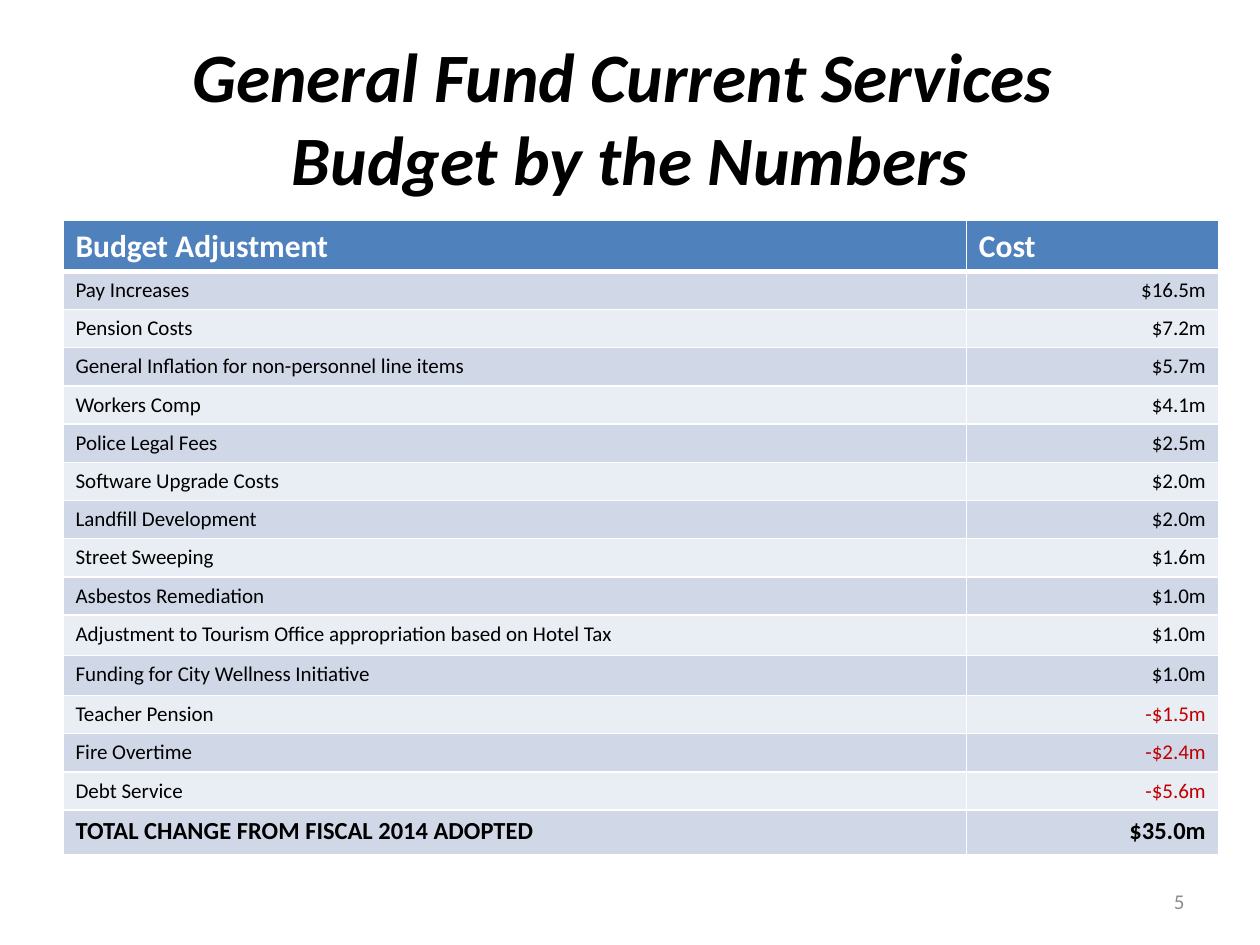
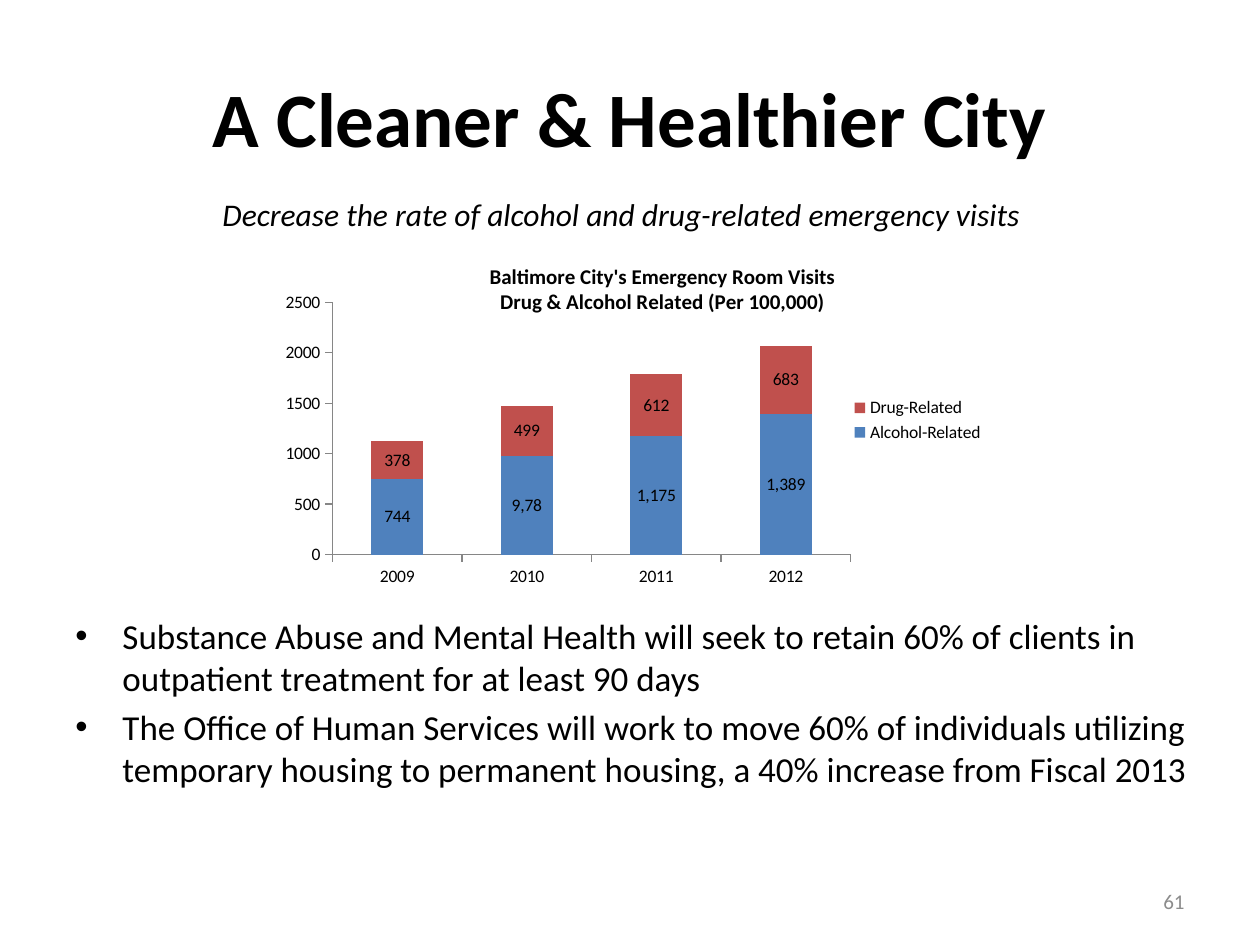
import pptx
import pptx.chart.data
import pptx.dml.color
import pptx.enum.chart
import pptx.enum.text
import pptx.oxml
import pptx.oxml.ns
import pptx.util

Cm, Pt = pptx.util.Cm, pptx.util.Pt
RGB = pptx.dml.color.RGBColor.from_string
ALIGN = pptx.enum.text.PP_ALIGN
MIDDLE = pptx.enum.text.MSO_ANCHOR.MIDDLE
NS = pptx.oxml.ns.nsdecls


class Theme:
    font = "Calibri"
    ink, white, gray, axis = "000000", "FFFFFF", "8C8C8C", "868686"
    blue, red, loss = "4F81BD", "C0504D", "C00000"
    bands = ("E9EDF4", "D0D8E8")
    head, body, lead, total, small, tick = 44, 20, 18, 14, 12, 10


def style(font, size, color=Theme.ink, bold=False, italic=False):
    font.name, font.size = Theme.font, Pt(size)
    font.bold, font.italic = bold, italic
    font.color.rgb = RGB(color)


def write(slide, box, lines, size, align, color=Theme.ink, italic=False):
    """Add a wrapped text box with one paragraph a line."""
    frame = slide.shapes.add_textbox(*map(Cm, box)).text_frame
    frame.word_wrap = True
    frame.text = "\n".join(lines)
    for para in frame.paragraphs:
        para.alignment = align
        style(para.runs[0].font, size, color, italic=italic)
    return frame


deck = pptx.Presentation()
deck.slide_width, deck.slide_height = Cm(25.4), Cm(19.05)

# Titles and page numbers
heads = [
    ("General Fund Current Services \vBudget by the Numbers", 39.6, True, "5"),
    ("A Cleaner & Healthier City", Theme.head, False, "61"),
]
for text, size, italic, page in heads:
    slide = deck.slides.add_slide(deck.slide_layouts[5])
    title = slide.shapes.title
    title.left, title.top, title.width, title.height = map(Cm, (1.27, 0.76, 22.86, 3.18))
    title.text_frame.text = text
    title.text_frame.vertical_anchor = MIDDLE
    para = title.text_frame.paragraphs[0]
    para.alignment = ALIGN.CENTER
    for run in para.runs:
        style(run.font, size, bold=True, italic=italic)
    foot = write(slide, (18.21, 17.65, 5.92, 1.02), [page], Theme.small, ALIGN.RIGHT, Theme.gray)
    foot.vertical_anchor = MIDDLE

budget, health = deck.slides

# Budget table
rows = [
    ("Budget Adjustment", "Cost"),
    ("Pay Increases", "$16.5m"),
    ("Pension Costs", "$7.2m"),
    ("General Inflation for non-personnel line items", "$5.7m"),
    ("Workers Comp", "$4.1m"),
    ("Police Legal Fees", "$2.5m"),
    ("Software Upgrade Costs", "$2.0m"),
    ("Landfill Development", "$2.0m"),
    ("Street Sweeping", "$1.6m"),
    ("Asbestos Remediation", "$1.0m"),
    ("Adjustment to Tourism Office appropriation based on Hotel Tax", "$1.0m"),
    ("Funding for City Wellness Initiative", "$1.0m"),
    ("Teacher Pension", "-$1.5m"),
    ("Fire Overtime", "-$2.4m"),
    ("Debt Service", "-$5.6m"),
    ("TOTAL CHANGE FROM FISCAL 2014 ADOPTED", "$35.0m"),
]
last = len(rows) - 1
highs = {0: 1.02, 10: 0.81, 11: 0.81, last: 0.91}
table = budget.shapes.add_table(
    len(rows), 2, Cm(1.27), Cm(4.45), Cm(23.29), Cm(12.79)).table
table.columns[0].width, table.columns[1].width = Cm(18.21), Cm(5.08)
for r, row in enumerate(rows):
    table.rows[r].height = Cm(highs.get(r, 0.77))
    for c, text in enumerate(row):
        cell = table.cell(r, c)
        cell.text = text
        cell.fill.solid()
        cell.fill.fore_color.rgb = RGB(Theme.bands[r % 2] if r else Theme.blue)
        para = cell.text_frame.paragraphs[0]
        para.alignment = ALIGN.RIGHT if r and c else ALIGN.LEFT
        size = {0: Theme.lead, last: Theme.total}.get(r, Theme.small)
        color = Theme.loss if text.startswith("-") else Theme.ink if r else Theme.white
        style(para.runs[0].font, size, color, bold=r in (0, last))
        props = cell._tc.get_or_add_tcPr()
        for n, side in enumerate("LRTB"):
            thick = (r, side) in ((0, "B"), (1, "T"))
            props.insert(n, pptx.oxml.parse_xml(
                f'<a:ln{side} {NS("a")} w="{Pt(3 if thick else 1)}"><a:solidFill>'
                f'<a:srgbClr val="{Theme.white}"/></a:solidFill></a:ln{side}>'))

# Health goal and actions
write(health, (0, 3.81, 25.2, 1.02),
      ["Decrease the rate of alcohol and drug-related emergency visits "],
      Theme.lead, ALIGN.CENTER, italic=True)
goals = write(health, (1.27, 12.27, 22.91, 5.38), [
    "Substance Abuse and Mental Health will seek to retain 60% of clients in "
    "outpatient treatment for at least 90 days",
    "The Office of Human Services will work to move 60% of individuals utilizing "
    "temporary housing to permanent housing, a 40% increase from Fiscal 2013",
], Theme.body, ALIGN.LEFT)
for n, para in enumerate(goals.paragraphs):
    props = para._p.get_or_add_pPr()
    props.set("marL", str(Cm(0.95)))
    props.set("indent", str(-Cm(0.95)))
    for mark in ('buFont {} typeface="Arial"', 'buChar {} char="•"'):
        props.append(pptx.oxml.parse_xml(f"<a:{mark.format(NS('a'))}/>"))
    para.space_before = Pt(4 if n else 0)

# Emergency visits chart
data = pptx.chart.data.CategoryChartData(number_format="General")
data.categories = ["2009", "2010", "2011", "2012"]
data.add_series("Alcohol-Related", (744, 978, 1175, 1389))
data.add_series("Drug-Related", (378, 499, 612, 683))
kinds = pptx.enum.chart
chart = health.shapes.add_chart(
    kinds.XL_CHART_TYPE.COLUMN_STACKED, Cm(5.38), Cm(5.08), Cm(14.71), Cm(6.78), data).chart
style(chart.font, Theme.lead)
chart.has_title = True
frame = chart.chart_title.text_frame
frame.text = "Baltimore City's Emergency Room Visits\nDrug & Alcohol Related (Per 100,000)"
for para in frame.paragraphs:
    style(para.runs[0].font, Theme.small, bold=True)
chart.has_legend = True
chart.legend.position = kinds.XL_LEGEND_POSITION.RIGHT
chart.legend.include_in_layout = False
style(chart.legend.font, Theme.tick)

for axis in (chart.category_axis, chart.value_axis):
    axis.has_major_gridlines = False
    axis.major_tick_mark = kinds.XL_TICK_MARK.OUTSIDE
    axis.format.line.color.rgb = RGB(Theme.axis)
    style(axis.tick_labels.font, Theme.tick)
chart.value_axis.minimum_scale, chart.value_axis.maximum_scale = 0, 2500
chart.value_axis.major_unit = 500

plot = chart.plots[0]
plot.gap_width, plot.overlap = 150, 100
plot.vary_by_categories = False
for series, color in zip(plot.series, (Theme.blue, Theme.red)):
    series.format.fill.solid()
    series.format.fill.fore_color.rgb = RGB(color)
    series.data_labels.show_value = True
    style(series.data_labels.font, Theme.tick)
for n, text in enumerate(("9,78", "1,175", "1,389"), 1):
    frame = plot.series[0].points[n].data_label.text_frame
    frame.text = text
    style(frame.paragraphs[0].runs[0].font, Theme.tick)

# Fixed places of the chart title and the plot
spots = [
    ("title", 1, {"xMode": "edge", "yMode": "edge", "x": 0.3, "y": 0.02}),
    ("plotArea", 0, {"layoutTarget": "inner", "xMode": "edge", "yMode": "edge",
                     "x": 0.09, "y": 0.15, "w": 0.71, "h": 0.75}),
]
for name, place, spot in spots:
    part = chart.element.xpath(f"c:chart/c:{name}")[0]
    for old in part.xpath("c:layout"):
        part.remove(old)
    marks = "".join(f'<c:{key} val="{val}"/>' for key, val in spot.items())
    part.insert(place, pptx.oxml.parse_xml(
        f'<c:layout {NS("c")}><c:manualLayout>{marks}</c:manualLayout></c:layout>'))
for over in chart.element.xpath("c:chart/c:title/c:overlay"):
    over.set("val", "1")

deck.save("out.pptx")
